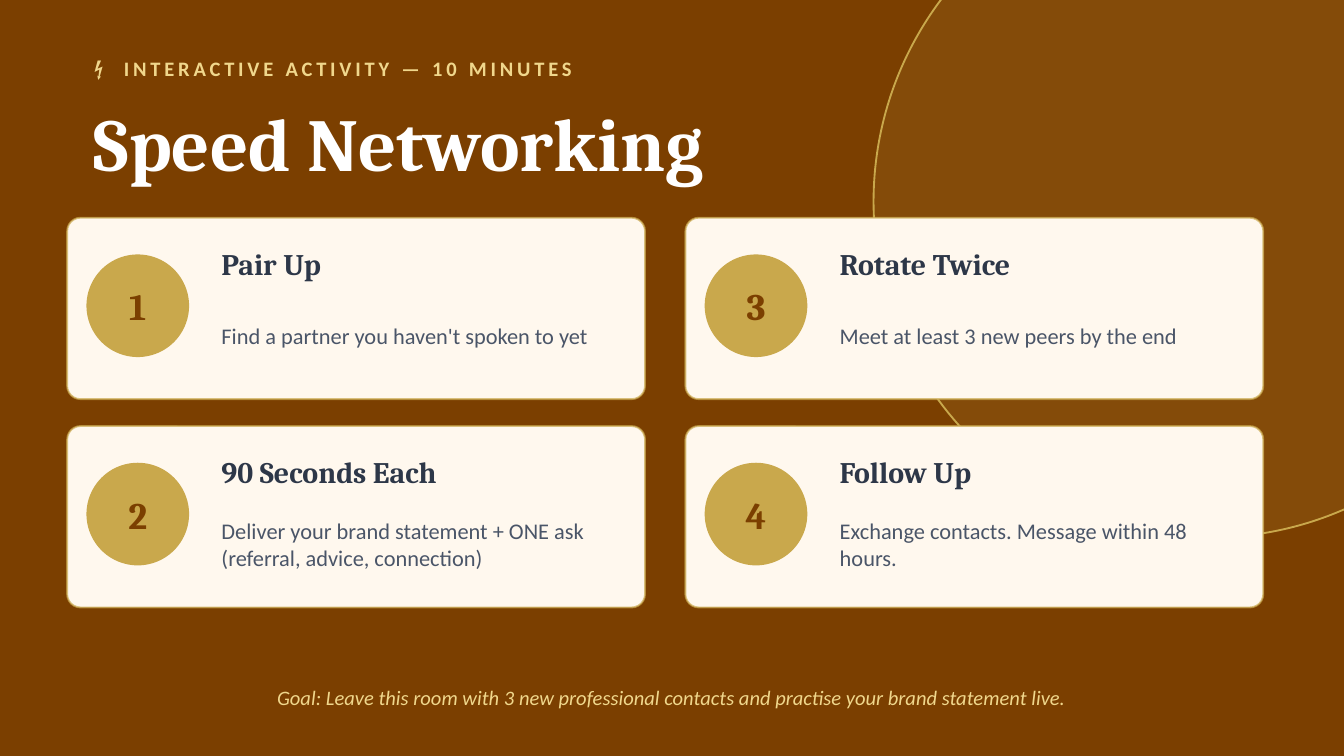
"""Build the Speed Networking activity slide."""
import pptx
import pptx.dml.color
import pptx.enum.shapes
import pptx.enum.text
import pptx.oxml.ns
import pptx.util
from lxml import etree

Inches = pptx.util.Inches
RGBColor = pptx.dml.color.RGBColor
Kind = pptx.enum.shapes.MSO_SHAPE
Align = pptx.enum.text.PP_ALIGN
qn = pptx.oxml.ns.qn

BROWN = RGBColor(0x7B, 0x3F, 0x00)
GOLD = RGBColor(0xC9, 0xA8, 0x4C)
PALE = RGBColor(0xF0, 0xD7, 0x8C)
CREAM = RGBColor(0xFF, 0xF8, 0xEE)
WHITE = RGBColor(0xFF, 0xFF, 0xFF)
DARK = RGBColor(0x2D, 0x37, 0x48)
SLATE = RGBColor(0x4A, 0x55, 0x68)

deck = pptx.Presentation()
deck.slide_width = Inches(10)
deck.slide_height = Inches(10 * 9 / 16)
slide = deck.slides.add_slide(deck.slide_layouts[6])
slide.background.fill.solid()
slide.background.fill.fore_color.rgb = BROWN


def add_form(kind, x, y, w, h, color, fade=100, edge=100):
    form = slide.shapes.add_shape(kind, Inches(x), Inches(y), Inches(w), Inches(h))
    form.shadow.inherit = False
    form.fill.solid()
    form.fill.fore_color.rgb = color
    form.line.color.rgb = GOLD
    form.line.width = pptx.util.Pt(1)
    tints = form._element.spPr.iter(qn("a:srgbClr"))
    for tint, level in zip(tints, (fade, edge)):
        if level < 100:
            etree.SubElement(tint, qn("a:alpha"), val=str(level * 1000))
    return form


def add_text(text, x, y, w, h, size, face, color, bold=False, align=Align.LEFT):
    box = slide.shapes.add_textbox(Inches(x), Inches(y), Inches(w), Inches(h))
    frame = box.text_frame
    frame.word_wrap = True
    frame.vertical_anchor = pptx.enum.text.MSO_ANCHOR.MIDDLE
    frame.text = text
    frame.paragraphs[0].alignment = align
    font = frame.paragraphs[0].runs[0].font
    font.size = pptx.util.Pt(size)
    font.name = face
    font.color.rgb = color
    font.bold = bold
    return frame


add_form(Kind.OVAL, 6.5, -1, 5, 5, GOLD, fade=12)
label = add_text("⚡  INTERACTIVE ACTIVITY — 10 MINUTES",
                 0.6, 0.35, 8.5, 0.32, 11, "Calibri", PALE, True)
label.paragraphs[0].runs[0].font._element.set("spc", "200")
add_text("Speed Networking", 0.6, 0.68, 7.5, 0.75, 40, "Cambria", WHITE, True)

steps = [
    ("Pair Up", "Find a partner you haven't spoken to yet"),
    ("90 Seconds Each",
     "Deliver your brand statement + ONE ask (referral, advice, connection)"),
    ("Rotate Twice", "Meet at least 3 new peers by the end"),
    ("Follow Up", "Exchange contacts. Message within 48 hours."),
]
for i, (title, body) in enumerate(steps):
    col, row = divmod(i, 2)
    x = 0.5 + col * 4.6
    y = 1.62 + row * 1.55
    card = add_form(Kind.ROUNDED_RECTANGLE, x, y, 4.3, 1.35, CREAM, edge=70)
    card.adjustments[0] = 0.1 / 1.35
    disc = (x + 0.15, y + 0.28, 0.75, 0.75)
    add_form(Kind.OVAL, *disc, GOLD)
    digit = add_text(str(i + 1), *disc, 20, "Cambria", BROWN, True, Align.CENTER)
    digit.margin_left = digit.margin_right = 0
    digit.margin_top = digit.margin_bottom = 0
    add_text(title, x + 1.05, y + 0.15, 3.1, 0.38, 16, "Cambria", DARK, True)
    add_text(body, x + 1.05, y + 0.52, 3.1, 0.72, 12, "Calibri", SLATE)

goal = add_text("Goal: Leave this room with 3 new professional contacts "
                "and practise your brand statement live.",
                0.6, 4.98, 8.8, 0.42, 11, "Calibri", PALE, align=Align.CENTER)
goal.paragraphs[0].runs[0].font.italic = True

deck.save("out.pptx")
